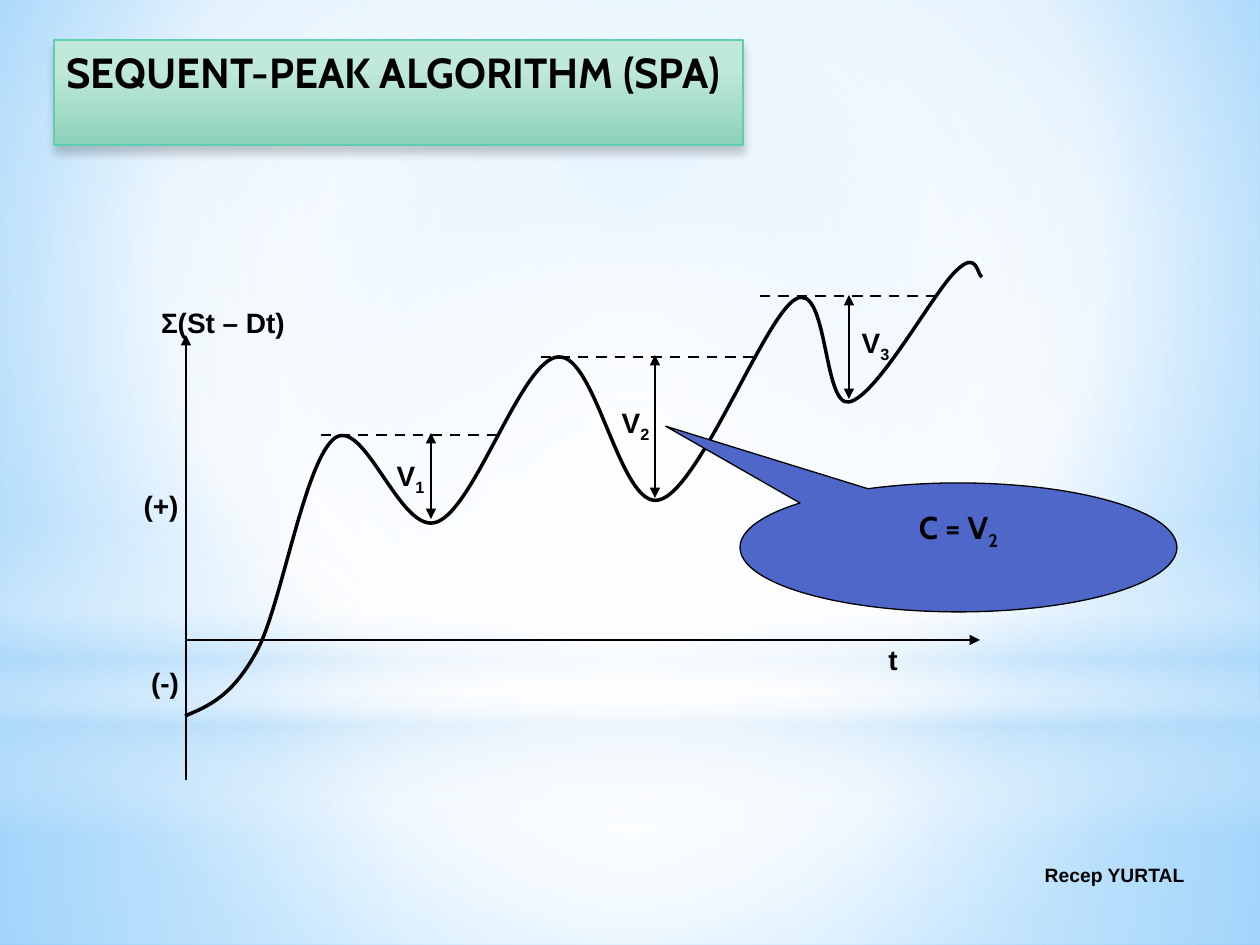
from lxml import etree
from pptx import Presentation
from pptx.dml.color import RGBColor
from pptx.enum.dml import MSO_LINE
from pptx.enum.shapes import MSO_CONNECTOR, MSO_SHAPE
from pptx.enum.text import MSO_ANCHOR, MSO_AUTO_SIZE, PP_ALIGN
from pptx.oxml import parse_xml
from pptx.oxml.ns import nsdecls, qn
from pptx.util import Emu, Pt

EMU_PER_PX = 914400 / 126
COLORS = {"ink": "000000", "callout": "4E67C8", "title_line": "5DCEAF"}

# Gradient stops: position %, colour, opacity %
BACKGROUND = [(0, "9ED5FF", 100), (60, "FFFFFF", 100), (100, "5BB9FF", 100)]
TITLE_FILL = [(28, "C0E9DA", 100), (100, "8CD1B8", 100)]
CENTRE = (50, 50, 50, 50)

# Backdrop: shape, box, stops, focus (None means top to bottom)
BACKDROP = [
    (MSO_SHAPE.RECTANGLE, (0, 703, 1260, 242),
     [(0, "FFFFFF", 91), (37, "FFFFFF", 76), (100, "B4DCFA", 79)], CENTRE),
    (MSO_SHAPE.RECTANGLE, (0, 0, 1260, 703),
     [(0, "FFFFFF", 89), (48, "FFFFFF", 62), (100, "B4DCFA", 79)], CENTRE),
    (MSO_SHAPE.RECTANGLE, (0, 519, 1260, 315),
     [(0, "FFFFFF", 0), (29, "FFFFFF", 30), (45, "B4DCFA", 40),
      (55, "FFFFFF", 26), (65, "B4DCFA", 60), (100, "FFFFFF", 0)], None),
    (MSO_SHAPE.OVAL, (0, 221, 1260, 703),
     [(0, "FFFFFF", 100), (56, "FFFFFF", 0)], CENTRE),
]

TITLE = "SEQUENT-PEAK ALGORITHM (SPA)"
AUTHOR = "Recep YURTAL"

# Diagram: lines are x1, y1, x2, y2
AXES = [(186, 640, 980, 640), (186, 780, 186, 335)]
PEAK_LEVELS = [(321, 435, 500, 435), (541, 357, 760, 357), (760, 296, 939, 296)]
VOLUMES = [(431, 519, 431, 433), (849, 399, 849, 295), (655, 498, 655, 355)]
CURVE_START = (185, 716)
CURVE = [  # two control points and an end point per row
    (209, 706), (233, 696), (258, 649),
    (282, 602), (305, 460), (335, 438),
    (365, 417), (401, 536), (437, 522),
    (475, 508), (522, 359), (558, 357),
    (596, 353), (620, 510), (659, 500),
    (699, 491), (765, 315), (796, 299),
    (828, 282), (823, 407), (849, 402),
    (877, 397), (934, 291), (956, 271),
    (978, 249), (977, 276), (982, 277),
]
LABELS = [  # text, subscript, box
    ("t", "", (810, 638, 166, 81)),
    ("Σ(St – Dt)", "", (140, 301, 166, 81)),
    ("(+)", "", (123, 484, 76, 81)),
    ("(-)", "", (127, 660, 76, 81)),
    ("V", "1", (363, 454, 95, 49)),
    ("V", "2", (588, 401, 95, 49)),
    ("V", "3", (828, 321, 95, 49)),
]


def px(*lengths):
    return [Emu(round(length * EMU_PER_PX)) for length in lengths]


def rgb(name):
    return RGBColor.from_string(COLORS[name])


def set_gradient(fill, parent, stops, focus=None):
    fill.solid()
    marks = "".join(
        f'<a:gs pos="{pos * 1000}"><a:srgbClr val="{color}">'
        f'<a:alpha val="{opacity * 1000}"/></a:srgbClr></a:gs>'
        for pos, color, opacity in stops)
    if focus:
        sides = " ".join(f'{side}="{value * 1000}"' for side, value in zip("ltrb", focus))
        course = f'<a:path path="circle"><a:fillToRect {sides}/></a:path>'
    else:
        course = '<a:lin ang="5400000" scaled="0"/>'
    gradient = parse_xml(f'<a:gradFill {nsdecls("a")} rotWithShape="1">'
                         f'<a:gsLst>{marks}</a:gsLst>{course}</a:gradFill>')
    parent.replace(parent.find(qn("a:solidFill")), gradient)


def set_line(shape, color, width):
    shape.line.color.rgb = rgb(color)
    shape.line.width = Pt(width)


def write(frame, text, subscript, size, font, align):
    paragraph = frame.paragraphs[0]
    paragraph.alignment = align
    paragraph.font.size = Pt(size)
    paragraph.font.name = font
    paragraph.font.bold = True
    paragraph.font.color.rgb = rgb("ink")
    paragraph.add_run().text = text
    if subscript:
        lowered = paragraph.add_run()
        lowered.text = subscript
        lowered.font._element.set("baseline", "-25000")


def add_line(shapes, ends, width, arrows=(), dashed=False):
    line = shapes.add_connector(MSO_CONNECTOR.STRAIGHT, *px(*ends))
    set_line(line, "ink", width)
    if dashed:
        line.line.dash_style = MSO_LINE.DASH
    properties = line._element.spPr
    for end in arrows:
        etree.SubElement(properties.find(qn("a:ln")), qn(f"a:{end}"), type="triangle")
    etree.SubElement(properties, qn("a:effectLst"))


def add_curve(shapes):
    builder = shapes.build_freeform(*CURVE_START, scale=EMU_PER_PX)
    builder.add_line_segments(CURVE, close=False)
    curve = builder.convert_to_shape()
    curve.fill.background()
    curve.shadow.inherit = False
    set_line(curve, "ink", 2)
    # Each three straight steps become one Bézier segment
    steps = list(curve._element.iter(qn("a:lnTo")))
    for first in range(0, len(steps), 3):
        bezier = etree.Element(qn("a:cubicBezTo"))
        steps[first].addprevious(bezier)
        for step in steps[first:first + 3]:
            bezier.append(step[0])
            step.getparent().remove(step)


def main():
    prs = Presentation()
    prs.slide_width, prs.slide_height = px(1260, 945)
    slide = prs.slides.add_slide(prs.slide_layouts[5])

    # Background and backdrop
    fill = slide.background.fill
    fill.solid()
    set_gradient(fill, slide._element.cSld.bg.bgPr, BACKGROUND, (20, 10, 20, 60))
    for kind, box, stops, focus in BACKDROP:
        glow = slide.shapes.add_shape(kind, *px(*box))
        glow.shadow.inherit = False
        glow.line.fill.background()
        set_gradient(glow.fill, glow._element.spPr, stops, focus)

    # Author
    author = slide.shapes.add_textbox(*px(850, 850, 347, 50)).text_frame
    author.word_wrap = True
    author.vertical_anchor = MSO_ANCHOR.MIDDLE
    write(author, AUTHOR, "", 11, "Arial", PP_ALIGN.RIGHT)

    # Diagram
    diagram = slide.shapes.add_group_shape().shapes
    for axis in AXES:
        add_line(diagram, axis, 1.5, arrows=["tailEnd"])
    add_curve(diagram)
    for level in PEAK_LEVELS:
        add_line(diagram, level, 1.5, dashed=True)
    for volume in VOLUMES:
        add_line(diagram, volume, 1, arrows=["headEnd", "tailEnd"])
    for text, subscript, box in LABELS:
        label = diagram.add_textbox(*px(*box)).text_frame
        label.word_wrap = True
        (label.margin_left, label.margin_top,
         label.margin_right, label.margin_bottom) = px(5, 5, 5, 5)
        write(label, text, subscript, 16, "Arial", PP_ALIGN.CENTER)

    # Capacity callout
    callout = slide.shapes.add_shape(MSO_SHAPE.OVAL_CALLOUT, *px(740, 483, 437, 129))
    callout.adjustments[0], callout.adjustments[1] = -0.67, -0.94
    callout.shadow.inherit = False
    callout.fill.solid()
    callout.fill.fore_color.rgb = rgb("callout")
    set_line(callout, "ink", 0.75)
    callout.text_frame.vertical_anchor = MSO_ANCHOR.TOP
    write(callout.text_frame, "C = V", "2", 18, "Cabin", PP_ALIGN.CENTER)

    # Title, in front of the backdrop
    title = slide.shapes.title
    title.left, title.top, title.width, title.height = px(54, 40, 689, 63)
    set_gradient(title.fill, title._element.spPr, TITLE_FILL)
    set_line(title, "title_line", 0.75)
    title._element.spPr.append(parse_xml(
        f'<a:effectLst {nsdecls("a")}><a:outerShdw blurRad="{Pt(5)}" dist="{Pt(4)}" '
        f'dir="5400000" rotWithShape="0"><a:srgbClr val="{COLORS["ink"]}">'
        '<a:alpha val="20000"/></a:srgbClr></a:outerShdw></a:effectLst>'))
    title.text_frame.word_wrap = False
    title.text_frame.auto_size = MSO_AUTO_SIZE.SHAPE_TO_FIT_TEXT
    title.text_frame.vertical_anchor = MSO_ANCHOR.TOP
    write(title.text_frame, TITLE, "", 24, "Cabin", PP_ALIGN.LEFT)
    slide.shapes._spTree.append(title._element)

    prs.save("out.pptx")


if __name__ == "__main__":
    main()
